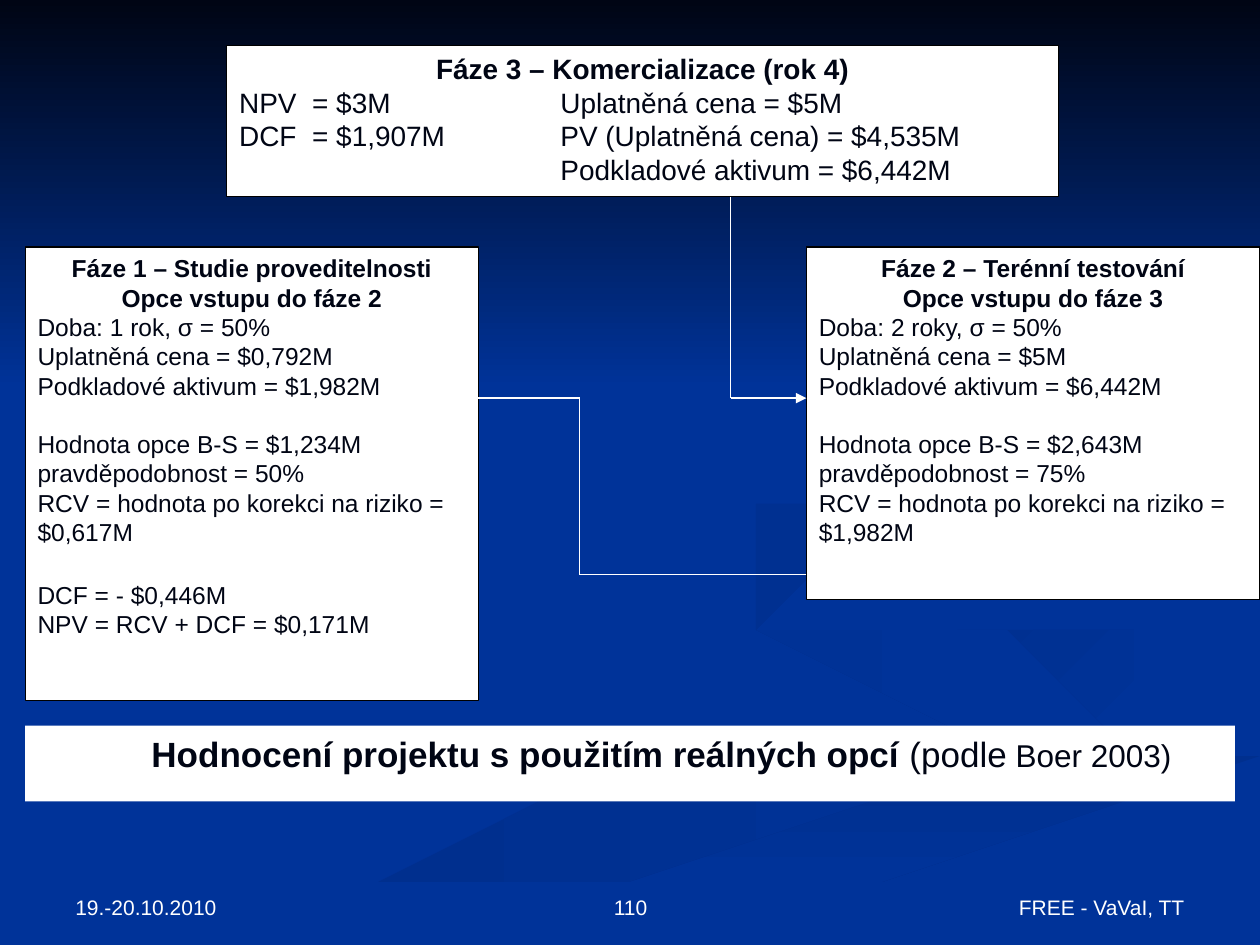
from dataclasses import dataclass

from lxml.etree import SubElement
from pptx import Presentation
from pptx.dml.color import RGBColor
from pptx.enum.shapes import MSO_CONNECTOR, MSO_SHAPE
from pptx.enum.text import MSO_ANCHOR, MSO_AUTO_SIZE, PP_ALIGN
from pptx.oxml.ns import qn
from pptx.util import Inches, Pt


@dataclass(frozen=True)
class Theme:
    font: str = "Arial"
    blue: str = "003399"
    shade: str = "002F8E"
    night: str = "000514"
    white: str = "FFFFFF"
    black: str = "000000"
    title: int = 20
    source: int = 18
    result: int = 16
    option: int = 14
    footer: int = 12
    hairline: float = 0.75


THEME = Theme()
LEFT, CENTER, RIGHT = PP_ALIGN.LEFT, PP_ALIGN.CENTER, PP_ALIGN.RIGHT
SLIDE_SIZE = (10, 7.5)
MARGIN = 0.2

TITLE_RUNS = [
    ("Hodnocení projektu s použitím reálných opcí ", THEME.title, True),
    ("(podle", THEME.title, False),
    (" Boer 2003)", THEME.source, False),
]

COMMERCIAL_PHASE = dict(
    heading=["Fáze 3 – Komercializace (rok 4)"],
    blocks=[["NPV\t= $3M\tUplatněná cena = $5M",
             "DCF\t= $1,907M\tPV (Uplatněná cena) = $4,535M",
             "\t\tPodkladové aktivum = $6,442M"]])

STUDY_PHASE = dict(
    heading=["Fáze 1 – Studie proveditelnosti", "Opce vstupu do fáze 2"],
    blocks=[["Doba: 1 rok, σ = 50%",
             "Uplatněná cena = $0,792M",
             "Podkladové aktivum = $1,982M"],
            ["Hodnota opce B-S = $1,234M",
             "pravděpodobnost = 50%",
             "RCV = hodnota po korekci na riziko = $0,617M"],
            ["DCF = - $0,446M", "NPV = RCV + DCF = $0,171M"]])

FIELD_PHASE = dict(
    heading=["Fáze 2 – Terénní testování", "Opce vstupu do fáze 3"],
    blocks=[["Doba: 2 roky, σ = 50%",
             "Uplatněná cena = $5M",
             "Podkladové aktivum = $6,442M"],
            ["Hodnota opce B-S = $2,643M",
             "pravděpodobnost = 75%",
             "RCV = hodnota po korekci na riziko = $1,982M"]])

# Corner points of each route; the last segment carries the arrowhead.
ROUTES = [
    [(5.8, 1.56), (5.8, 3.16), (6.4, 3.16)],
    [(6.4, 4.56), (4.6, 4.56), (4.6, 3.16), (3.6, 3.16)],
]

FOOTERS = [
    ("19.-20.10.2010", 0.5, 2.33, LEFT),
    ("FREE - VaVaI, TT", 7.17, 2.33, RIGHT),
    ("110", 3.42, 3.17, CENTER),
]

# Outlines of the background ribbons with their clockwise gradient angle.
RIBBONS = [
    (0, [(7.8, 5.5), (6.3, 5), (5.75, 4.6), (5.8, 4.85), (7.6, 5.45), (7.8, 5.8),
         (5.4, 6.5), (3, 7.49), (3.6, 7.49), (5, 6.85), (7.85, 6), (8, 5.8)]),
    (45, [(9.43, 5.7), (9.05, 5.4), (7.6, 5), (7.24, 4.64), (7.5, 5.05), (8.8, 5.5),
          (9.18, 5.8), (8.94, 6.05)]),
    (90, [(5.03, 7.49), (5.7, 7.49), (7.2, 6.8), (9.98, 6.1), (9.98, 5.8), (7.6, 6.5)]),
    (45, [(6.8, 4.3), (8.5, 3.9), (8.9, 3.3), (8.6, 3.7), (6.2, 4.25), (5.77, 4.6),
          (6.2, 5), (5.95, 4.65)]),
]


def inches(values):
    return [Inches(value) for value in values]


def rgb(code):
    return RGBColor.from_string(code)


def prepare_frame(frame, anchor=MSO_ANCHOR.TOP):
    frame.word_wrap = True
    frame.auto_size = MSO_AUTO_SIZE.NONE
    frame.vertical_anchor = anchor


def add_text(frame, text, *, size, color=THEME.night, bold=False, align=LEFT,
             gap=0, tabs=(), same_line=False):
    """Append a paragraph, or with same_line a run in the last paragraph."""
    line = frame.paragraphs[-1]
    if line.runs and not same_line:
        line = frame.add_paragraph()
    line.alignment = align
    line.space_before = Pt(gap)
    run = line.add_run()
    run.text = text
    run.font.name, run.font.size, run.font.bold = THEME.font, Pt(size), bold
    run.font.color.rgb = rgb(color)
    if tabs:
        stops = SubElement(line._p.get_or_add_pPr(), qn("a:tabLst"))
        for stop in tabs:
            SubElement(stops, qn("a:tab"), pos=str(Inches(stop)), algn="l")
    return line


def shade(area, start, end, angle):
    area.shadow.inherit = False
    area.line.fill.background()
    area.fill.gradient()
    area.fill.gradient_angle = -angle % 360
    for stop, color in zip(area.fill.gradient_stops, (start, end)):
        stop.color.rgb = rgb(color)


def add_backdrop(slide):
    slide.background.fill.solid()
    slide.background.fill.fore_color.rgb = rgb(THEME.blue)
    for angle, outline in RIBBONS:
        builder = slide.shapes.build_freeform(*outline[0], scale=Inches(1))
        builder.add_line_segments(outline[1:], close=True)
        shade(builder.convert_to_shape(), THEME.shade, THEME.blue, angle)
    sky = slide.shapes.add_shape(MSO_SHAPE.RECTANGLE, *inches((0, 0, SLIDE_SIZE[0], 3.08)))
    shade(sky, THEME.night, THEME.blue, 90)


def add_phase(slide, box, content, size=THEME.option, tabs=()):
    phase = slide.shapes.add_shape(MSO_SHAPE.RECTANGLE, *inches(box))
    phase.shadow.inherit = False
    phase.fill.solid()
    phase.fill.fore_color.rgb = rgb(THEME.white)
    phase.line.color.rgb = rgb(THEME.black)
    phase.line.width = Pt(THEME.hairline)
    prepare_frame(phase.text_frame)
    for text in content["heading"]:
        add_text(phase.text_frame, text, size=size, bold=True, align=CENTER)
    for block_gap, lines in zip((0, 16.5, 19), content["blocks"]):
        for index, text in enumerate(lines):
            add_text(phase.text_frame, text, size=size, tabs=tabs,
                     gap=0 if index else block_gap)


def add_route(slide, corners):
    for start, end in zip(corners, corners[1:]):
        segment = slide.shapes.add_connector(MSO_CONNECTOR.STRAIGHT, *inches(start + end))
        segment.line.color.rgb = rgb(THEME.white)
        segment.line.width = Pt(THEME.hairline)
        SubElement(segment.element.spPr, qn("a:effectLst"))
    SubElement(segment.line._get_or_add_ln(), qn("a:tailEnd"), type="triangle")


def add_title(slide):
    title = slide.shapes.title
    title.left, title.top, title.width, title.height = inches(
        (MARGIN, 5.76, SLIDE_SIZE[0] - 2 * MARGIN, 0.6))
    title.fill.solid()
    title.fill.fore_color.rgb = rgb(THEME.white)
    prepare_frame(title.text_frame)
    for text, size, bold in TITLE_RUNS:
        line = add_text(title.text_frame, text, size=size, bold=bold,
                        align=CENTER, same_line=True)
    line._p.get_or_add_pPr().set("marL", str(Inches(0.5)))
    slide.shapes.element.append(title.element)  # bring in front of the ribbons


def main():
    deck = Presentation()
    deck.slide_width, deck.slide_height = inches(SLIDE_SIZE)
    slide = deck.slides.add_slide(deck.slide_layouts[5])
    add_backdrop(slide)
    for text, left, width, align in FOOTERS:
        footer = slide.shapes.add_textbox(*inches((left, 6.83, width, 0.52))).text_frame
        prepare_frame(footer, MSO_ANCHOR.BOTTOM)
        add_text(footer, text, size=THEME.footer, color=THEME.white, align=align)
    add_phase(slide, (1.8, 0.36, 6.6, 1.2), COMMERCIAL_PHASE, THEME.result, (0.58, 2.55))
    add_phase(slide, (MARGIN, 1.96, 3.6, 3.6), STUDY_PHASE)
    add_phase(slide, (6.4, 1.96, 3.6, 2.8), FIELD_PHASE)
    for corners in ROUTES:
        add_route(slide, corners)
    add_title(slide)
    deck.save("out.pptx")


if __name__ == "__main__":
    main()
